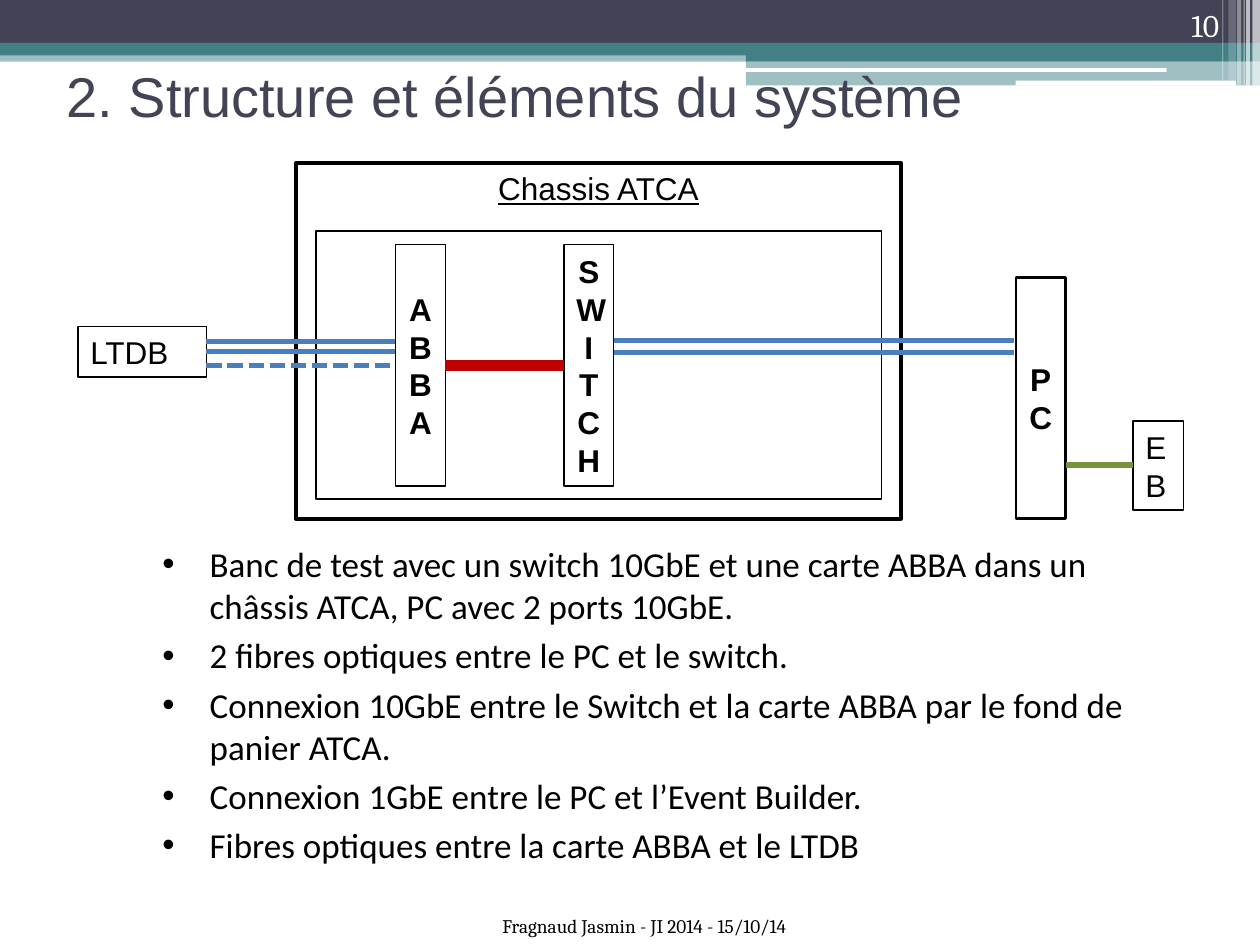
from dataclasses import dataclass
from typing import Optional

from lxml.etree import SubElement
from pptx import Presentation
from pptx.dml.color import RGBColor
from pptx.enum.dml import MSO_LINE
from pptx.enum.shapes import MSO_CONNECTOR, MSO_SHAPE
from pptx.enum.text import MSO_ANCHOR, PP_ALIGN
from pptx.oxml.ns import qn
from pptx.util import Pt

BLACK = RGBColor(0x00, 0x00, 0x00)
WHITE = RGBColor(0xFF, 0xFF, 0xFF)
NAVY = RGBColor(0x42, 0x44, 0x56)
TEAL = RGBColor(0x43, 0x80, 0x86)
BLUE = RGBColor(0x4B, 0x7E, 0xBC)
RED = RGBColor(0xC0, 0x00, 0x00)
GREEN = RGBColor(0x77, 0x93, 0x3C)


@dataclass
class Band:
    x: float
    y: float
    w: float
    h: float
    color: RGBColor
    alpha: int = 100
    round: bool = False


@dataclass
class Box:
    x: float
    y: float
    w: float
    h: float
    line: float
    text: str = ""
    bold: bool = False
    under: bool = False
    align: PP_ALIGN = PP_ALIGN.CENTER
    anchor: MSO_ANCHOR = MSO_ANCHOR.MIDDLE


@dataclass
class Link:
    start: float
    end: float
    y: float
    color: RGBColor
    width: float = 3
    dash: Optional[MSO_LINE] = None


BANDS = [
    Band(0, 28.8, 720, 6.5, TEAL, 50),
    Band(0, 0, 720, 24.5, NAVY),
    Band(0, 24.5, 720, 7.2, TEAL),
    Band(426.2, 28.1, 293.8, 6.9, TEAL),
    Band(426.2, 34.6, 293.8, 14.2, TEAL, 50),
    Band(425.5, 38.9, 241.2, 2.2, WHITE, round=True),
    Band(580.3, 46.1, 126, 2.9, WHITE, round=True),
    Band(715.7, 0, 4.3, 49, WHITE, 65),
    Band(712.1, 0, 2.2, 49, WHITE, 65),
    Band(710.6, 0, 0.7, 49, WHITE, 60),
    Band(707, 0, 2.2, 49, WHITE, 40),
    Band(702, 0, 4.3, 46.1, WHITE, 20),
    Band(698.4, 0, 0.7, 46.1, WHITE, 30),
]

BOXES = [
    Box(580.5, 158.5, 28.4, 138, 1.5, "P\nC", bold=True),
    Box(169.2, 93, 345.6, 203.5, 2.25, "Chassis ATCA", under=True,
        anchor=MSO_ANCHOR.TOP),
    Box(180.7, 132.2, 323.1, 153, 1),
    Box(322.3, 139.8, 28.4, 138, 0.75, "S\nW\nI\nT\nC\nH", bold=True),
    Box(226, 139.8, 28.5, 138, 0.75, "A\nB\nB\nA", bold=True),
    Box(647.5, 240.5, 28.8, 51, 0.75, "EB", align=PP_ALIGN.LEFT),
    Box(44.5, 186.5, 73.5, 29, 0.75, "LTDB", align=PP_ALIGN.LEFT),
]

LINKS = [
    Link(350.7, 579.6, 194.4, BLUE),
    Link(350.7, 579.6, 201.4, BLUE),
    Link(254.5, 322.3, 208.8, RED, 6),
    Link(609, 647.5, 265.7, GREEN),
    Link(118, 226, 195.1, BLUE),
    Link(118, 226, 200.9, BLUE),
    Link(118, 226, 208.8, BLUE, dash=MSO_LINE.SQUARE_DOT),
]

POINTS = [
    "Banc de test avec un switch 10GbE et une carte ABBA dans un "
    "châssis ATCA, PC avec 2 ports 10GbE.",
    "2 fibres optiques entre le PC et le switch.",
    "Connexion 10GbE entre le Switch et la carte ABBA par le fond de "
    "panier ATCA.",
    "Connexion 1GbE entre le PC et l’Event Builder.",
    "Fibres optiques entre la carte ABBA et le LTDB",
]


def write(shape, text: str, *, size: float = 18, font: str = "Arial",
          color: RGBColor = BLACK, bold: bool = False, under: bool = False,
          align: PP_ALIGN = PP_ALIGN.LEFT,
          anchor: MSO_ANCHOR = MSO_ANCHOR.TOP, bullet: str = "") -> None:
    frame = shape.text_frame
    frame.word_wrap = True
    frame.vertical_anchor = anchor
    frame.text = text
    for para in frame.paragraphs:
        para.alignment = align
        for run in para.runs:
            run.font.size = Pt(size)
            run.font.name = font
            run.font.color.rgb = color
            run.font.bold = bold
            run.font.underline = under
        if bullet:
            para.space_before = Pt(size * 0.2)
            props = para._p.get_or_add_pPr()
            props.set("marL", str(Pt(27)))
            props.set("indent", str(-Pt(27)))
            SubElement(props, qn("a:buFont"), typeface="Arial")
            SubElement(props, qn("a:buChar"), char=bullet)


def place(slide, x: float, y: float, w: float, h: float):
    return slide.shapes.add_textbox(Pt(x), Pt(y), Pt(w), Pt(h))


def draw_band(slide, band: Band) -> None:
    kind = MSO_SHAPE.ROUNDED_RECTANGLE if band.round else MSO_SHAPE.RECTANGLE
    shape = slide.shapes.add_shape(
        kind, Pt(band.x), Pt(band.y), Pt(band.w), Pt(band.h))
    shape.shadow.inherit = False
    shape.line.fill.background()
    shape.fill.solid()
    shape.fill.fore_color.rgb = band.color
    if band.alpha < 100:
        tint = shape._element.spPr.find(".//" + qn("a:srgbClr"))
        SubElement(tint, qn("a:alpha"), val=str(band.alpha * 1000))


def draw_box(slide, box: Box) -> None:
    shape = slide.shapes.add_shape(
        MSO_SHAPE.RECTANGLE, Pt(box.x), Pt(box.y), Pt(box.w), Pt(box.h))
    shape.shadow.inherit = False
    shape.fill.background()
    shape.line.color.rgb = BLACK
    shape.line.width = Pt(box.line)
    if box.text:
        write(shape, box.text, bold=box.bold, under=box.under,
              align=box.align, anchor=box.anchor)


def draw_link(slide, link: Link) -> None:
    wire = slide.shapes.add_connector(
        MSO_CONNECTOR.STRAIGHT, Pt(link.start), Pt(link.y),
        Pt(link.end), Pt(link.y))
    wire.line.color.rgb = link.color
    wire.line.width = Pt(link.width)
    if link.dash:
        wire.line.dash_style = link.dash
    SubElement(wire._element.spPr, qn("a:effectLst"))


def main() -> None:
    deck = Presentation()
    deck.slide_width, deck.slide_height = Pt(720), Pt(540)
    slide = deck.slides.add_slide(deck.slide_layouts[6])
    for band in BANDS:
        draw_band(slide, band)
    write(place(slide, 31, 37.4, 648, 34),
          "2. Structure et éléments du système",
          size=32, color=NAVY, anchor=MSO_ANCHOR.MIDDLE)
    write(place(slide, 76.3, 519, 584, 21),
          "Fragnaud Jasmin - JI 2014 - 15/10/14",
          size=11, font="Cambria", align=PP_ALIGN.CENTER)
    write(place(slide, 643.7, 0, 60, 28.8), "10", font="Cambria",
          color=WHITE, align=PP_ALIGN.RIGHT, anchor=MSO_ANCHOR.BOTTOM)
    write(place(slide, 85.7, 306.7, 582.5, 207.4), "\n".join(POINTS),
          size=20, font="Calibri", bullet="•")
    for box in BOXES:
        draw_box(slide, box)
    for link in LINKS:
        draw_link(slide, link)
    deck.save("out.pptx")


if __name__ == "__main__":
    main()
